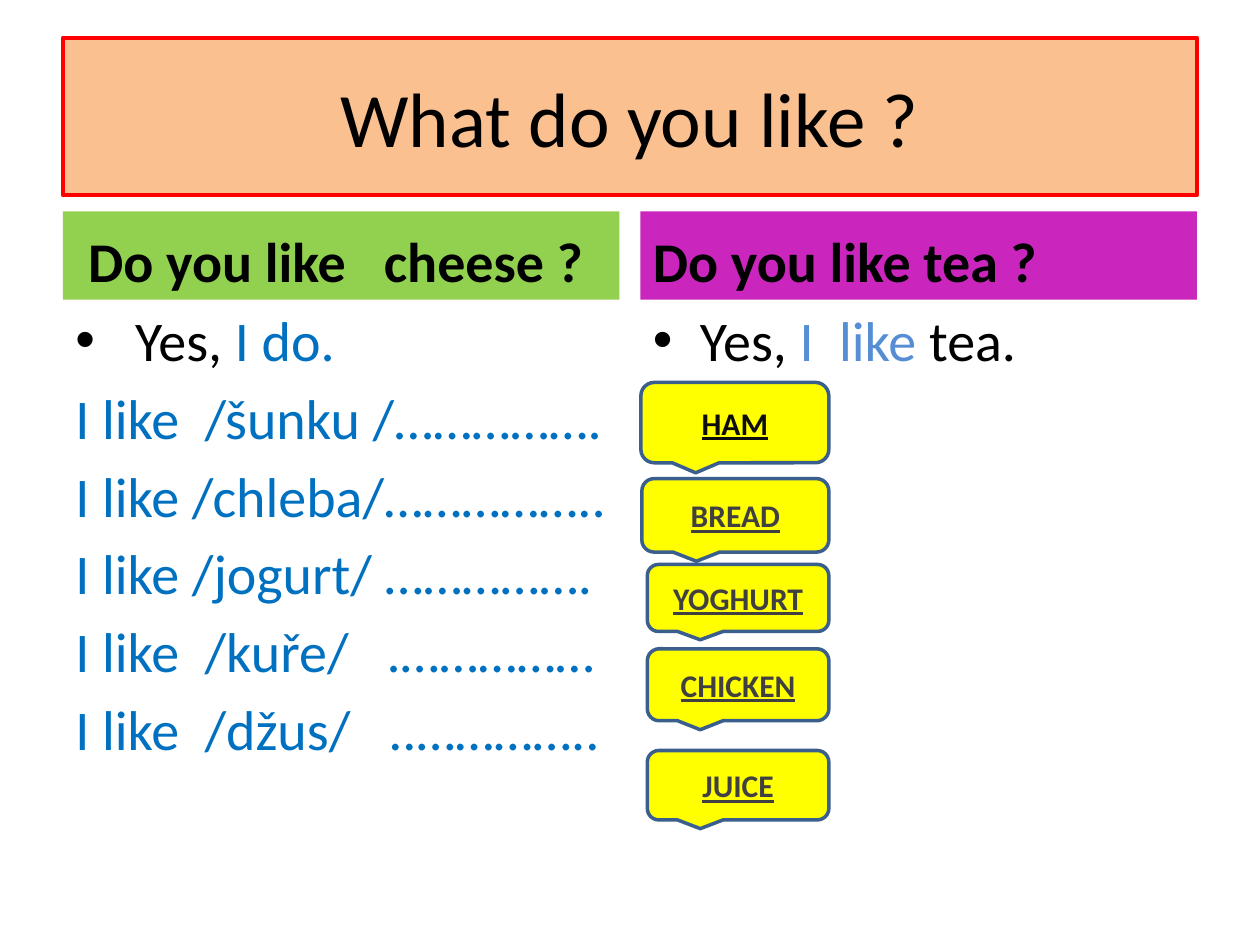
"""Build the "What do you like ?" vocabulary slide."""
from lxml import etree
from pptx import Presentation
from pptx.dml.color import RGBColor
from pptx.enum.shapes import MSO_SHAPE
from pptx.enum.text import MSO_ANCHOR, PP_ALIGN
from pptx.oxml.ns import qn
from pptx.util import Cm, Pt

RECTANGLE = MSO_SHAPE.RECTANGLE
CALLOUT = MSO_SHAPE.ROUNDED_RECTANGULAR_CALLOUT
TOP, MIDDLE, BOTTOM = MSO_ANCHOR.TOP, MSO_ANCHOR.MIDDLE, MSO_ANCHOR.BOTTOM
LEFT, CENTER = PP_ALIGN.LEFT, PP_ALIGN.CENTER

BLACK, BLUE, PALE_BLUE = "000000", "0070C0", "558ED5"
NEAR_BLACK, GREY = "0D0D0D", "404040"
COLUMN_WIDTH = 11.22
LEFT_COLUMN, RIGHT_COLUMN = 1.27, 12.91
CALLOUT_RIGHT = 16.71


def rgb(value):
    """Turn a hex string into a colour."""
    return RGBColor.from_string(value)


class SlideBuilder:
    """Hold the text style and the current slide."""

    def __init__(self, slide, font="Calibri"):
        """Start building on a slide."""
        self.slide = slide
        self.font = font

    def add_runs(self, paragraph, runs, size, align=LEFT, **formats):
        """Fill a paragraph with (wording, colour) runs."""
        paragraph.alignment = align
        for wording, colour in runs:
            run = paragraph.add_run()
            run.text = wording
            run.font.color.rgb = rgb(colour)
            values = {"name": self.font, "size": Pt(size), **formats}
            for name, value in values.items():
                setattr(run.font, name, value)

    def panel(self, kind, box, fill, runs, size, anchor=MIDDLE,
              align=CENTER, outline=None, **formats):
        """Add a filled shape with one line of text."""
        panel = self.slide.shapes.add_shape(kind, *map(Cm, box))
        panel.shadow.inherit = False
        panel.fill.solid()
        panel.fill.fore_color.rgb = rgb(fill)
        if outline:
            colour, width = outline
            panel.line.color.rgb = rgb(colour)
            panel.line.width = Pt(width)
        else:
            panel.line.fill.background()
        panel.text_frame.vertical_anchor = anchor
        self.add_runs(panel.text_frame.paragraphs[0], runs, size, align,
                      **formats)

    def answers(self, box, lines, size=32):
        """Add a text block whose first line carries a bullet."""
        frame = self.slide.shapes.add_textbox(*map(Cm, box)).text_frame
        frame.word_wrap = True
        frame.vertical_anchor = TOP
        for index, runs in enumerate(lines):
            paragraph = frame.add_paragraph() if index else frame.paragraphs[0]
            paragraph.space_before = Pt(6)
            self.add_runs(paragraph, runs, size)
            if index == 0:
                self.bullet(paragraph)

    def bullet(self, paragraph, indent=0.95):
        """Give a paragraph a hanging bullet."""
        properties = paragraph._p.get_or_add_pPr()
        properties.set("marL", str(Cm(indent)))
        properties.set("indent", str(-Cm(indent)))
        etree.SubElement(properties, qn("a:buFont")).set("typeface", "Arial")
        etree.SubElement(properties, qn("a:buChar")).set("char", "•")


def main():
    """Build and save the slide."""
    deck = Presentation()
    deck.slide_width, deck.slide_height = Cm(25.4), Cm(19.05)
    builder = SlideBuilder(deck.slides.add_slide(deck.slide_layouts[6]))

    builder.panel(RECTANGLE, (LEFT_COLUMN, 0.76, 22.86, 3.18), "FAC090",
                  [("What do you like ?", BLACK)], 44, outline=("FF0000", 2.25))

    sentences = ["I like  /šunku /…………….", "I like /chleba/……………..",
                 "I like /jogurt/ …………….", "I like  /kuře/   .……………",
                 "I like  /džus/   ..………….."]
    cheese_answers = [[(" Yes, ", BLACK), ("I do.", BLUE)]]
    cheese_answers += [[(sentence, BLUE)] for sentence in sentences]
    tea_answers = [[("Yes, ", BLACK), ("I  like ", PALE_BLUE), ("tea.", BLACK)]]
    columns = [
        (LEFT_COLUMN, "92D050", " Do you like   cheese ?", cheese_answers),
        (RIGHT_COLUMN, "CA26BE", "Do you like tea ?", tea_answers),
    ]
    for left, fill, question, lines in columns:
        builder.panel(RECTANGLE, (left, 4.26, COLUMN_WIDTH, 1.78), fill,
                      [(question, BLACK)], 32, BOTTOM, LEFT, bold=True)
        builder.answers((left, 6.04, COLUMN_WIDTH, 10.97), lines)

    foods = [
        ("HAM", 12.92, 7.71, 1.62, NEAR_BLACK),
        ("BREAD", 12.94, 9.65, 1.48, GREY),
        ("YOGHURT", 13.05, 11.38, 1.35, GREY),
        ("CHICKEN", 13.05, 13.08, 1.45, GREY),
        ("JUICE", 13.05, 15.13, 1.4, GREY),
    ]
    for food, left, top, height, colour in foods:
        builder.panel(CALLOUT, (left, top, CALLOUT_RIGHT - left, height),
                      "FFFF00", [(food, colour)], 18, outline=("3A5F8C", 2),
                      bold=True, underline=True)

    deck.save("out.pptx")


if __name__ == "__main__":
    main()
